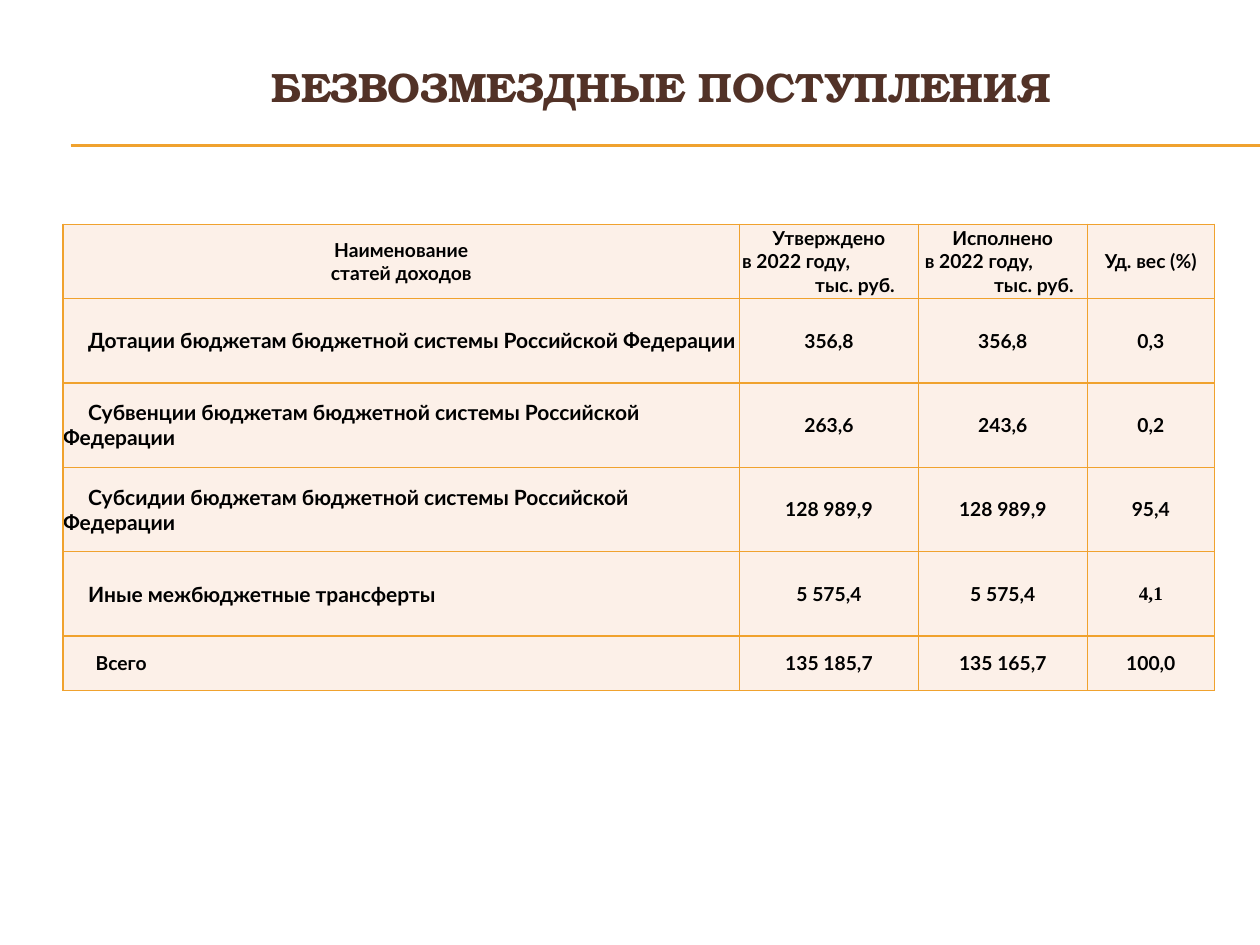
from dataclasses import dataclass

from lxml.etree import SubElement as Sub
from pptx import Presentation
from pptx.dml.color import RGBColor
from pptx.enum.shapes import MSO_CONNECTOR as Conn
from pptx.enum.text import MSO_ANCHOR as Anchor, MSO_AUTO_SIZE as Fit, PP_ALIGN as Align
from pptx.oxml.ns import qn
from pptx.util import Inches, Pt

WIDE, HIGH = 10, 7.5
GOLD, CREAM, BROWN, BLACK = "F0A22E", "FCF0E8", "523227", "000000"
COLS = [5.37, 1.42, 1.34, 1.01]
ROWS = [0.59] + [0.67] * 4 + [0.43]


@dataclass
class Line:
    text: str
    size: float = 11
    face: str = "Lato"
    align: Align = Align.CENTER
    left: float = 0    # left margin, inches
    first: float = 0   # first-line indent, inches


def hue(code: str) -> RGBColor:
    return RGBColor.from_string(code)


def name(text: str, size: float = 12, first: float = 0.2) -> list[Line]:
    return [Line(text, size, align=Align.LEFT, first=first)]


def head(text: str, left: float) -> list[Line]:
    return [Line(text),
            Line("в 2022 году,", align=Align.LEFT, left=left),
            Line("тыс. руб.", align=Align.LEFT, left=0.6)]


def style(para, line: Line, color: str) -> None:
    para.text = line.text
    para.alignment = line.align
    props = para._p.get_or_add_pPr()
    props.set("marL", str(Inches(line.left)))
    props.set("indent", str(Inches(line.first)))
    font = para.font
    font.name, font.size, font.bold = line.face, Pt(line.size), True
    font.color.rgb = hue(color)


def edge(cell, width: float) -> None:
    props = cell._tc.get_or_add_tcPr()
    for side in ("lnL", "lnR", "lnT", "lnB"):
        rule = Sub(props, qn(f"a:{side}"), w=str(Pt(width)))
        Sub(Sub(rule, qn("a:solidFill")), qn("a:srgbClr"), val=GOLD)


def fill(cell, lines: list[Line]) -> None:
    edge(cell, 1)
    cell.fill.solid()
    cell.fill.fore_color.rgb = hue(CREAM)
    cell.vertical_anchor = Anchor.MIDDLE
    cell.margin_left = cell.margin_right = cell.margin_top = cell.margin_bottom = 0
    frame = cell.text_frame
    for i, line in enumerate(lines):
        style(frame.add_paragraph() if i else frame.paragraphs[0], line, BLACK)


def draw_rule(slide, y: float) -> None:
    rule = slide.shapes.add_connector(
        Conn.STRAIGHT, Inches(0.56), Inches(y), Inches(WIDE), Inches(y))
    rule.line.color.rgb = hue(GOLD)
    rule.line.width = Pt(0.75)
    Sub(rule._element.spPr, qn("a:effectLst"))


def draw_title(slide, text: str) -> None:
    title = slide.shapes.title
    title.left, title.top = Inches(0.5), Inches(0.44)
    title.width, title.height = Inches(WIDE - 0.5), Inches(0.92)
    frame = title.text_frame
    frame.auto_size, frame.word_wrap = Fit.NONE, True
    frame.vertical_anchor = Anchor.TOP
    style(frame.paragraphs[0], Line(text, 23.4, "TeX Gyre Bonum"), BROWN)


def draw_table(slide, data: list) -> None:
    table = slide.shapes.add_table(
        len(ROWS), len(COLS), Inches(0.5), Inches(1.78),
        Inches(sum(COLS)), Inches(sum(ROWS))).table
    table.first_row = table.horz_banding = False
    for col, width in zip(table.columns, COLS):
        col.width = Inches(width)
    for row, height, items in zip(table.rows, ROWS, data):
        row.height = Inches(height)
        for cell, item in zip(row.cells, items):
            fill(cell, [Line(item)] if isinstance(item, str) else item)


# Table content: plain strings are centred figures
DATA = [
    ["Наименование\vстатей доходов", head("Утверждено", 0.02),
     head("Исполнено", 0.05), "Уд. вес (%)"],
    [name("Дотации бюджетам бюджетной системы Российской Федерации"),
     "356,8", "356,8", "0,3"],
    [name("Субвенции бюджетам бюджетной системы Российской Федерации"),
     "263,6", "243,6", "0,2"],
    [name("Субсидии бюджетам бюджетной системы Российской Федерации"),
     "128 989,9", "128 989,9", "95,4"],
    [name("Иные межбюджетные трансферты"),
     "5 575,4", "5 575,4", [Line("4,1", face="Times New Roman")]],
    [name("Всего", 11, 0.26), "135 185,7", "135 165,7", "100,0"],
]


def main() -> None:
    deck = Presentation()
    deck.slide_width, deck.slide_height = Inches(WIDE), Inches(HIGH)
    slide = deck.slides.add_slide(deck.slide_layouts[5])
    # Double rule under the title
    for y in (1.15, 1.16):
        draw_rule(slide, y)
    draw_title(slide, "БЕЗВОЗМЕЗДНЫЕ ПОСТУПЛЕНИЯ")
    draw_table(slide, DATA)
    deck.save("out.pptx")


if __name__ == "__main__":
    main()
